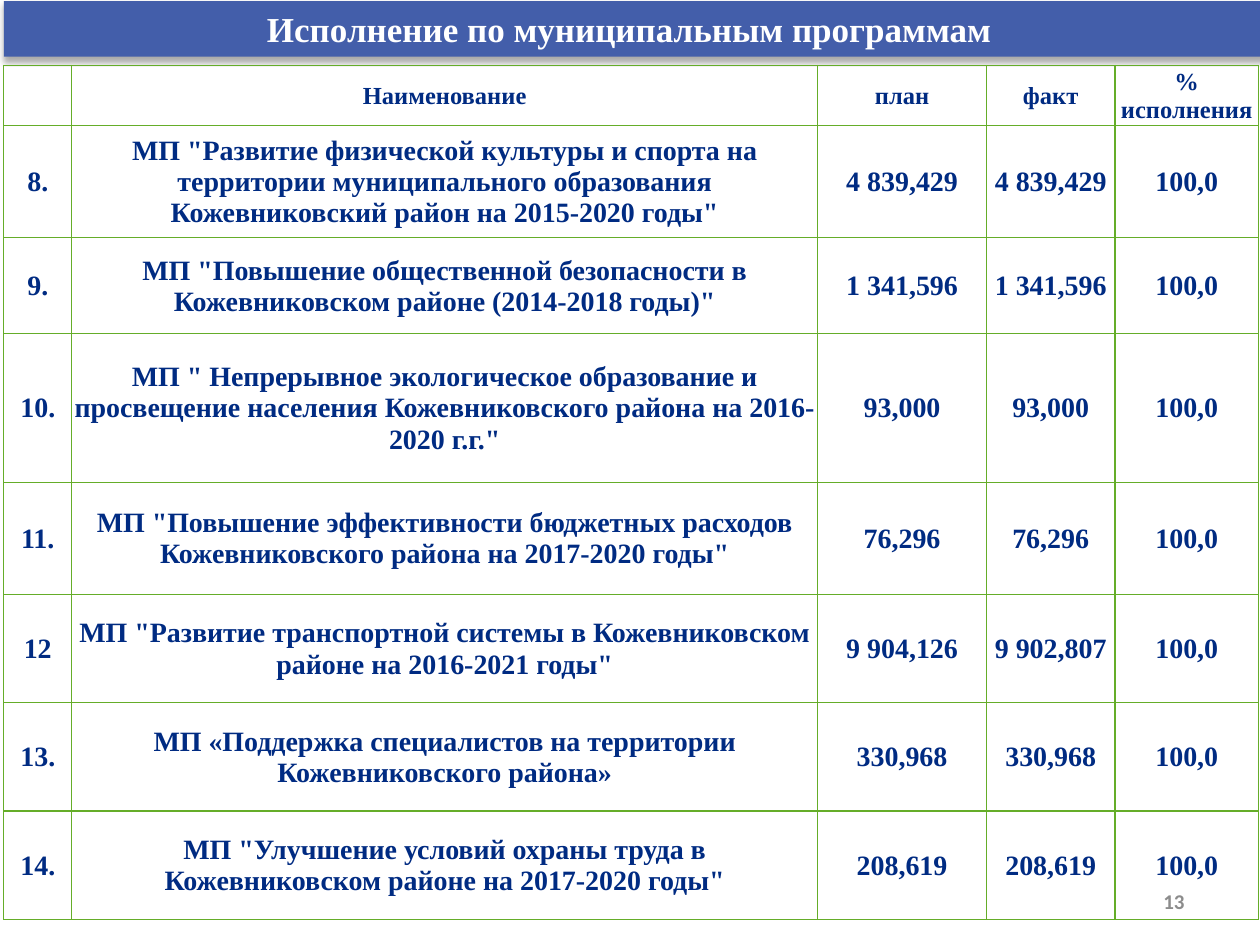
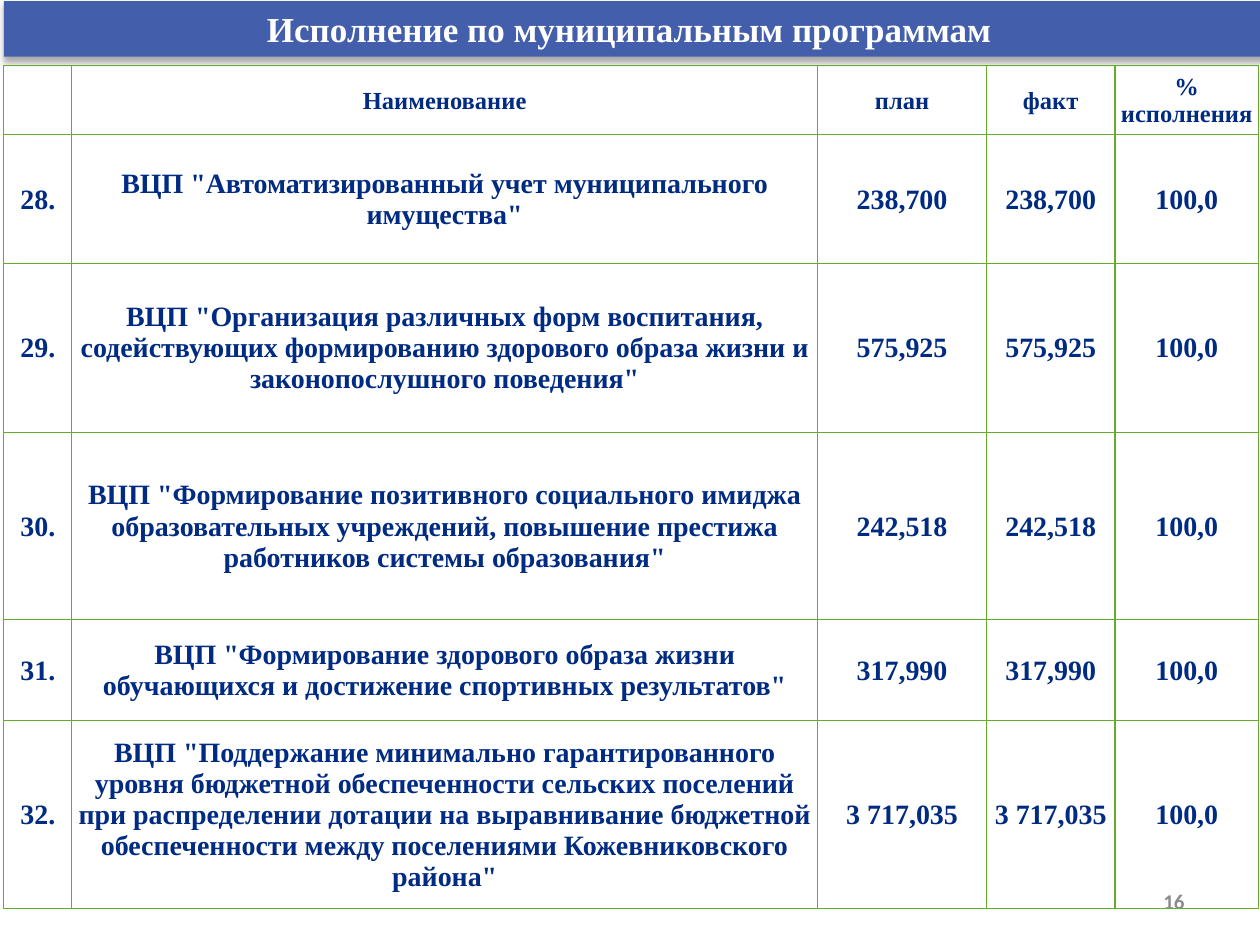
from dataclasses import dataclass, astuple
from typing import Any

from lxml import etree
from pptx import Presentation
from pptx import oxml as ox
from pptx import presentation as pr
from pptx import slide as sl
from pptx import table as tb
from pptx import util as u
from pptx.dml import color as dc
from pptx.enum import text as et
from pptx.oxml import ns
from pptx.text import text as tt

COLOURS = {
    "band": "435EAA",
    "band_text": "FFFFFF",
    "table_text": "002B82",
    "border": "65AD29",
    "number": "8C8C8C",
    "shadow": "000000",
}
SERIF = "Times New Roman"
TITLE = "Исполнение по муниципальным программам "
HEADINGS = ("", "Наименование", "план", "факт", "% исполнения")
COLUMN_WIDTHS = (0.54, 5.92, 1.34, 1.02, 1.14)
LEFT = 0.03
TABLE_TOP = 0.52

TITLE_FONT = {"name": SERIF, "size": u.Pt(20), "bold": True}
HEADING_FONT = {"name": SERIF, "size": u.Pt(14), "bold": True}
BODY_FONT = {"name": SERIF, "size": u.Pt(16), "bold": True}
NUMBER_FONT = {"name": "Calibri", "size": u.Pt(12), "bold": True}
CELL_FORMAT = {
    "margin_left": u.Inches(0.01),
    "margin_right": u.Inches(0.01),
    "margin_top": u.Inches(0.01),
    "margin_bottom": u.Inches(0),
    "vertical_anchor": et.MSO_ANCHOR.MIDDLE,
}


@dataclass(frozen=True)
class Program:
    number: str
    name: str
    plan: str
    fact: str
    percent: str = "100,0"


@dataclass(frozen=True)
class ProgramPage:
    page_number: str
    row_heights: tuple[float, ...]
    programs: tuple[Program, ...]


PAGES = (
    ProgramPage("13", (0.47, 0.89, 0.76, 1.18, 0.89, 0.86, 0.86, 0.86), (
        Program("8.", 'МП "Развитие физической культуры и спорта на территории муниципального '
                'образования Кожевниковский район на 2015-2020 годы"', "4 839,429", "4 839,429"),
        Program("9.", 'МП "Повышение общественной безопасности в Кожевниковском районе '
                '(2014-2018 годы)"', "1 341,596", "1 341,596"),
        Program("10.", 'МП " Непрерывное экологическое образование и просвещение населения '
                'Кожевниковского района на 2016-2020 г.г."', "93,000", "93,000"),
        Program("11.", 'МП "Повышение эффективности бюджетных расходов Кожевниковского района '
                'на 2017-2020 годы"', "76,296", "76,296"),
        Program("12", 'МП "Развитие транспортной системы в Кожевниковском районе '
                'на 2016-2021 годы"', "9 904,126", "9 902,807"),
        Program("13.", "МП «Поддержка специалистов на территории Кожевниковского района»",
                "330,968", "330,968"),
        Program("14.", 'МП "Улучшение условий охраны труда в Кожевниковском районе '
                'на 2017-2020 годы"', "208,619", "208,619"),
    )),
    ProgramPage("16", (0.55, 1.02, 1.34, 1.49, 0.8, 1.49), (
        Program("28.", 'ВЦП "Автоматизированный учет муниципального имущества"',
                "238,700", "238,700"),
        Program("29.", 'ВЦП "Организация различных форм воспитания, содействующих формированию '
                'здорового образа жизни и законопослушного поведения"', "575,925", "575,925"),
        Program("30.", 'ВЦП "Формирование позитивного социального имиджа образовательных '
                'учреждений, повышение престижа работников системы образования"',
                "242,518", "242,518"),
        Program("31.", 'ВЦП "Формирование здорового образа жизни обучающихся и достижение '
                'спортивных результатов"', "317,990", "317,990"),
        Program("32.", 'ВЦП "Поддержание минимально гарантированного уровня бюджетной '
                'обеспеченности сельских поселений при распределении дотации на выравнивание '
                'бюджетной обеспеченности между поселениями Кожевниковского района"',
                "3 717,035", "3 717,035"),
    )),
)


def colour(key: str) -> dc.RGBColor:
    return dc.RGBColor.from_string(COLOURS[key])


def apply(target: Any, values: dict[str, Any]) -> None:
    for name, value in values.items():
        setattr(target, name, value)


def write(frame: tt.TextFrame, words: str, font: dict[str, Any], ink: str,
          alignment: et.PP_ALIGN = et.PP_ALIGN.CENTER) -> None:
    para = frame.paragraphs[0]
    para.alignment = alignment
    span = para.add_run()
    span.text = words
    apply(span.font, font)
    span.font.color.rgb = colour(ink)


def place(shape: Any, left: float, top: float, width: float, height: float) -> None:
    sides = {"left": left, "top": top, "width": width, "height": height}
    apply(shape, {name: u.Inches(value) for name, value in sides.items()})


def add_shadow(shape: Any) -> None:
    effects = ox.parse_xml(
        f'<a:effectLst {ns.nsdecls("a")}>'
        f'<a:outerShdw blurRad="{u.Pt(3.5)}" dist="{u.Pt(2.2)}" dir="5400000" rotWithShape="0">'
        f'<a:srgbClr val="{COLOURS["shadow"]}"><a:alpha val="32000"/></a:srgbClr>'
        '</a:outerShdw></a:effectLst>')
    shape.element.spPr.append(effects)


def add_title(page: sl.Slide) -> None:
    band = page.shapes.title
    place(band, LEFT, 0.01, 10, 0.44)
    band.fill.solid()
    band.fill.fore_color.rgb = colour("band")
    band.line.fill.background()
    add_shadow(band)
    apply(band.text_frame, {
        "word_wrap": True,
        "auto_size": et.MSO_AUTO_SIZE.NONE,
        "vertical_anchor": et.MSO_ANCHOR.TOP,
    })
    write(band.text_frame, TITLE, TITLE_FONT, "band_text")


def add_page_number(page: sl.Slide, number: str) -> None:
    box = page.shapes.add_textbox(*(u.Inches(n) for n in (7.17, 6.95, 2.33, 0.4)))
    apply(box.text_frame, {"word_wrap": True, "vertical_anchor": et.MSO_ANCHOR.MIDDLE})
    write(box.text_frame, number, NUMBER_FONT, "number", et.PP_ALIGN.RIGHT)


def set_borders(cell: tb._Cell) -> None:
    properties = cell._tc.get_or_add_tcPr()
    for index, side in enumerate(("lnL", "lnR", "lnT", "lnB")):
        line = etree.Element(ns.qn(f"a:{side}"), w=str(u.Pt(0.75)))
        fill = etree.SubElement(line, ns.qn("a:solidFill"))
        etree.SubElement(fill, ns.qn("a:srgbClr"), val=COLOURS["border"])
        properties.insert(index, line)


def add_program_table(page: sl.Slide, content: ProgramPage) -> None:
    rows = [HEADINGS, *(astuple(program) for program in content.programs)]
    frame = page.shapes.add_table(
        len(rows), len(HEADINGS), u.Inches(LEFT), u.Inches(TABLE_TOP),
        u.Inches(sum(COLUMN_WIDTHS)), u.Inches(sum(content.row_heights)))
    table = frame.table
    apply(table, {"first_row": False, "horz_banding": False})
    for column, width in zip(table.columns, COLUMN_WIDTHS):
        column.width = u.Inches(width)
    for row, height in zip(table.rows, content.row_heights):
        row.height = u.Inches(height)
    for row_index, values in enumerate(rows):
        font = BODY_FONT if row_index else HEADING_FONT
        for column_index, words in enumerate(values):
            cell = table.cell(row_index, column_index)
            apply(cell, CELL_FORMAT)
            cell.fill.background()
            set_borders(cell)
            if words:
                write(cell.text_frame, words, font, "table_text")


def add_program_page(deck: pr.Presentation, content: ProgramPage) -> None:
    page = deck.slides.add_slide(deck.slide_layouts.get_by_name("Title Only"))
    add_title(page)
    add_page_number(page, content.page_number)
    add_program_table(page, content)


def main() -> None:
    deck = Presentation()
    apply(deck, {"slide_width": u.Inches(10), "slide_height": u.Inches(7.5)})
    for content in PAGES:
        add_program_page(deck, content)
    deck.save("out.pptx")


if __name__ == "__main__":
    main()
